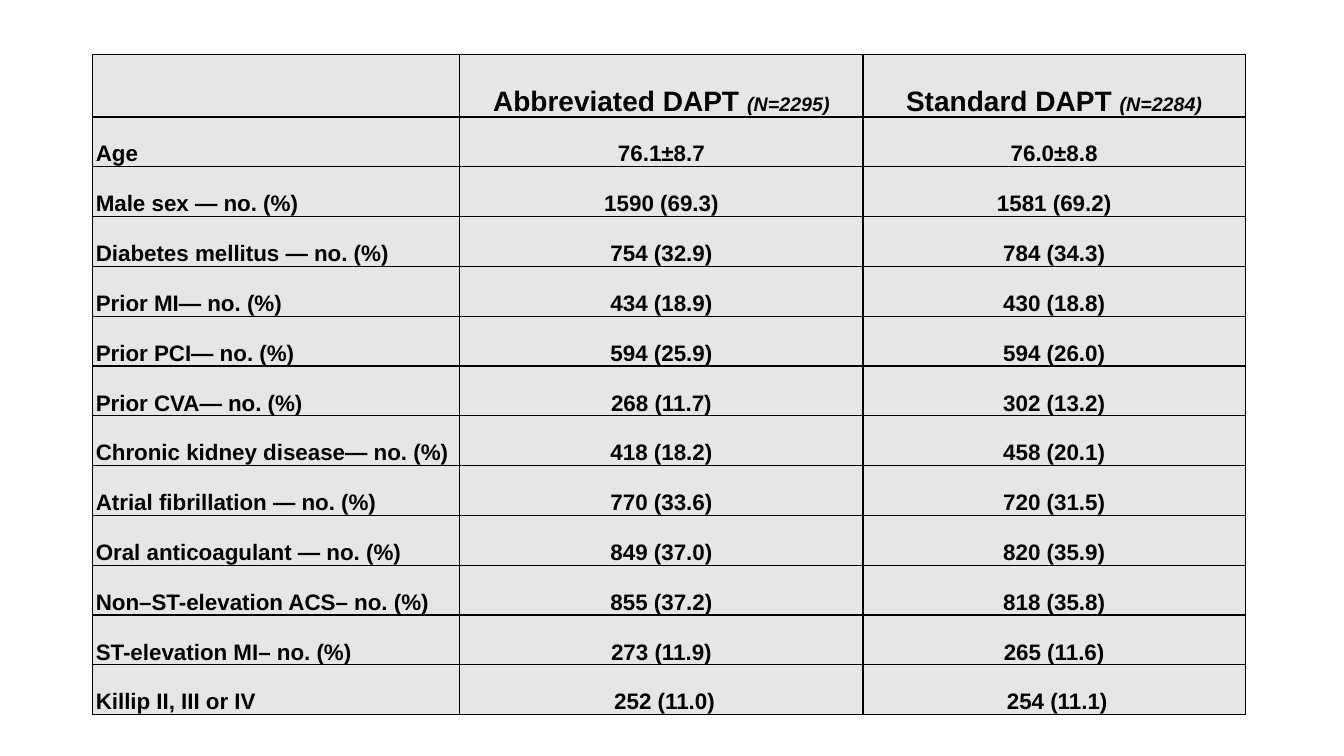
from lxml import etree
from pptx import Presentation
from pptx.dml.color import RGBColor
from pptx.enum.text import MSO_ANCHOR, PP_ALIGN
from pptx.oxml.ns import qn
from pptx.util import Inches, Pt

CENTER, LEFT = PP_ALIGN.CENTER, PP_ALIGN.LEFT
TOP, BOTTOM = MSO_ANCHOR.TOP, MSO_ANCHOR.BOTTOM
BLANK_LAYOUT = 6
BLACK, GREY = "000000", "E7E6E6"

GROUPS = [("Abbreviated DAPT ", "(N=2295)"), ("Standard DAPT ", "(N=2284)")]
BASELINE = [
    ("Age", "76.1±8.7", "76.0±8.8"),
    ("Male sex — no. (%)", "1590 (69.3)", "1581 (69.2)"),
    ("Diabetes mellitus — no. (%)", "754 (32.9)", "784 (34.3)"),
    ("Prior MI— no. (%)", "434 (18.9)", "430 (18.8)"),
    ("Prior PCI— no. (%)", "594 (25.9)", "594 (26.0)"),
    ("Prior CVA— no. (%)", "268 (11.7)", "302 (13.2)"),
    ("Chronic kidney disease— no. (%)", "418 (18.2)", "458 (20.1)"),
    ("Atrial fibrillation — no. (%)", "770 (33.6)", "720 (31.5)"),
    ("Oral anticoagulant — no. (%)", "849 (37.0)", "820 (35.9)"),
    ("Non–ST-elevation ACS– no. (%)", "855 (37.2)", "818 (35.8)"),
    ("ST-elevation MI– no. (%)", "273 (11.9)", "265 (11.6)"),
    ("Killip II, III or IV", " 252 (11.0)", " 254 (11.1)"),
]
COL_WIDTHS = [3.64, 4, 3.79]
HEADER_HEIGHT, ROW_HEIGHT = 0.47, 0.38


def style_cell(cell):
    """Give the cell thin black borders and a grey fill."""
    tc_pr = cell._tc.get_or_add_tcPr()
    for side in ("a:lnL", "a:lnR", "a:lnT", "a:lnB"):
        ln = etree.SubElement(tc_pr, qn(side), w=str(Pt(1)))
        fill = etree.SubElement(ln, qn("a:solidFill"))
        etree.SubElement(fill, qn("a:srgbClr"), val=BLACK)
    cell.fill.solid()
    cell.fill.fore_color.rgb = RGBColor.from_string(GREY)


def write_cell(cell, runs, align, anchor):
    """Fill the cell with runs of (text, size, italic)."""
    cell.margin_left = cell.margin_right = Inches(0.03)
    cell.margin_top = cell.margin_bottom = 0
    cell.vertical_anchor = anchor
    p = cell.text_frame.paragraphs[0]
    p.alignment = align
    p.line_spacing = 2.0
    for text, size, italic in runs:
        r = p.add_run()
        r.text = text
        r.font.name = "Arial"
        r.font.size = Pt(size)
        r.font.bold = True
        r.font.italic = italic
        r.font.color.rgb = RGBColor.from_string(BLACK)


prs = Presentation()
prs.slide_width, prs.slide_height = Inches(13.33), Inches(7.5)
s = prs.slides.add_slide(prs.slide_layouts[BLANK_LAYOUT])

table = s.shapes.add_table(
    len(BASELINE) + 1, len(COL_WIDTHS), Inches(0.92), Inches(0.54),
    Inches(sum(COL_WIDTHS)), Inches(HEADER_HEIGHT + ROW_HEIGHT * len(BASELINE)),
).table
table.horz_banding = False
for column, width in zip(table.columns, COL_WIDTHS):
    column.width = Inches(width)
for i, row in enumerate(table.rows):
    row.height = Inches(ROW_HEIGHT if i else HEADER_HEIGHT)
for cell in table.iter_cells():
    style_cell(cell)

for col, (group, count) in enumerate(GROUPS, 1):
    write_cell(table.cell(0, col), [(group, 20, False), (count, 14, True)], CENTER, BOTTOM)
for row, values in enumerate(BASELINE, 1):
    for col, text in enumerate(values):
        write_cell(table.cell(row, col), [(text, 16, False)], CENTER if col else LEFT, TOP)

prs.save("out.pptx")
